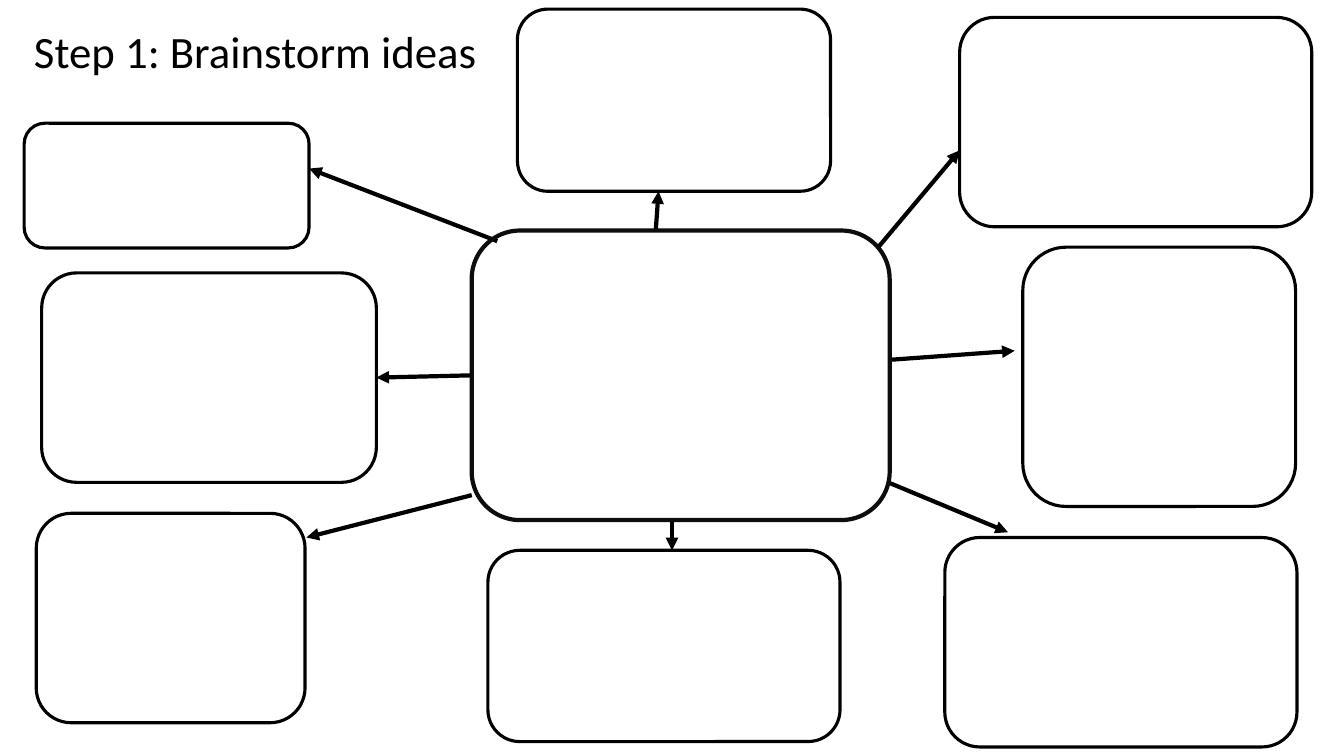
from dataclasses import dataclass

import pptx
import pptx.dml.color
import pptx.enum.shapes
import pptx.enum.text
import pptx.oxml
import pptx.oxml.ns
import pptx.util


@dataclass(frozen=True)
class Theme:
    font: str = "Calibri"
    title_size: int = 32
    ink: str = "000000"
    hub_ink: str = "0D0D0D"
    box_line: float = 2.25
    bold_line: float = 3


THEME = Theme()
WIDTH = pptx.util.Inches(13.33)
HEIGHT = pptx.util.Inches(7.5)
LEFT, RIGHT = 1, 3

# Shares of the slide's width and height, in percent: left, top, width, height
IDEAS = {
    "upper right": (71.4, 2.3, 26.2, 27.7),
    "right": (76.1, 32.7, 20.3, 34.3),
    "lower right": (70.3, 71.1, 26.2, 27.7),
    "bottom": (36.3, 72.8, 26.2, 25.3),
    "lower left": (2.7, 67.9, 20, 27.7),
    "left": (3.1, 36.1, 24.9, 27.7),
    "upper left": (1.8, 16.3, 21.2, 16.5),
    "top": (38.5, 1.2, 23.3, 24.1),
}
HUB = (35.1, 30.5, 31.1, 38.3)
ARROWS = {
    "upper right": (65.3, 32.8, 71.4, 19.9),
    "right": (66.2, 47.6, 75.5, 46.4),
    "lower right": (66.2, 63.9, 75, 70.4),
    "bottom": (50, 68.7, 50, 72.8),
    "lower left": (35.1, 65.5, 22.8, 71.1),
    "left": (35.1, 49.6, 28, 50),
    "upper left": (37, 31.9, 23, 22.3),
    "top": (48.8, 30.3, 49, 25.3),
}
TITLE = (0, 2.5, 38, 8.5)


def to_emu(shares):
    return [round(share * side / 100)
            for share, side in zip(shares, (WIDTH, HEIGHT) * 2)]


def set_line(line, color, width):
    line.color.rgb = pptx.dml.color.RGBColor.from_string(color)
    line.width = pptx.util.Pt(width)


def add_box(s, place, color, width):
    sp = s.shapes.add_shape(
        pptx.enum.shapes.MSO_SHAPE.ROUNDED_RECTANGLE, *to_emu(place))
    sp.shadow.inherit = False
    sp.fill.background()
    set_line(sp.line, color, width)
    return sp


def add_arrow(s, ends):
    arrow = s.shapes.add_connector(
        pptx.enum.shapes.MSO_CONNECTOR.STRAIGHT, *to_emu(ends))
    set_line(arrow.line, THEME.ink, THEME.bold_line)
    sp_pr = arrow.line._get_or_add_ln().getparent()
    head = pptx.oxml.parse_xml(
        f'<a:tailEnd {pptx.oxml.ns.nsdecls("a")} type="triangle"/>')
    arrow.line._get_or_add_ln().append(head)
    sp_pr.append(pptx.oxml.parse_xml(
        f'<a:effectLst {pptx.oxml.ns.nsdecls("a")}/>'))
    return arrow


def add_title(s, text):
    tf = s.shapes.add_textbox(*to_emu(TITLE)).text_frame
    tf.word_wrap = True
    tf.auto_size = pptx.enum.text.MSO_AUTO_SIZE.SHAPE_TO_FIT_TEXT
    p = tf.paragraphs[0]
    p.alignment = pptx.enum.text.PP_ALIGN.CENTER
    r = p.add_run()
    r.text = text
    r.font.name = THEME.font
    r.font.size = pptx.util.Pt(THEME.title_size)
    r.font.color.rgb = pptx.dml.color.RGBColor.from_string(THEME.ink)


def main():
    prs = pptx.Presentation()
    prs.slide_width, prs.slide_height = WIDTH, HEIGHT
    s = prs.slides.add_slide(prs.slide_layouts[6])

    ideas = {name: add_box(s, place, THEME.ink, THEME.box_line)
             for name, place in IDEAS.items()}
    arrows = {name: add_arrow(s, ends) for name, ends in ARROWS.items()}
    hub = add_box(s, HUB, THEME.hub_ink, THEME.bold_line)
    arrows["left"].begin_connect(hub, LEFT)
    arrows["left"].end_connect(ideas["left"], RIGHT)
    add_title(s, "Step 1: Brainstorm ideas")

    prs.save("out.pptx")


if __name__ == "__main__":
    main()
